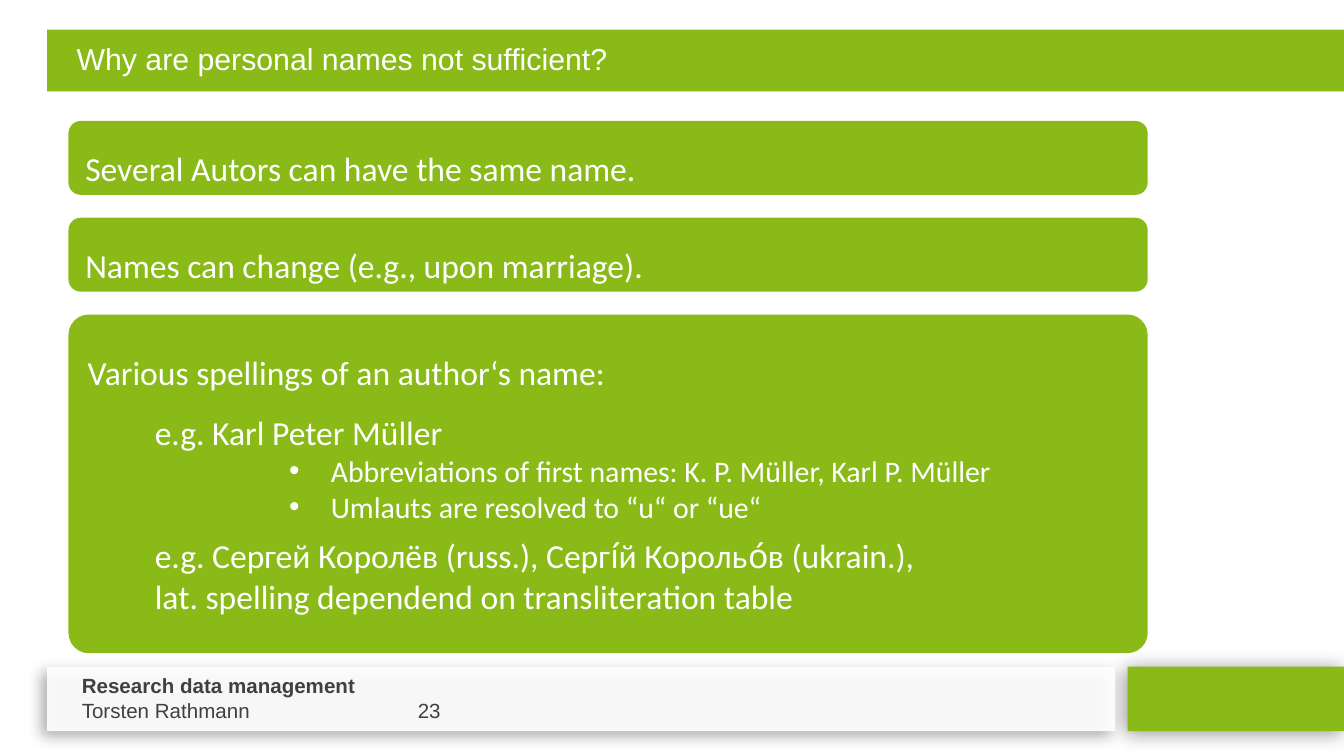
import pptx
import pptx.util
import pptx.dml.color
import pptx.enum.shapes
import pptx.enum.text
import pptx.oxml
from pptx.oxml.ns import nsdecls, qn

Inch, Pt = pptx.util.Inches, pptx.util.Pt
Kind = pptx.enum.shapes.MSO_SHAPE
Anchor = pptx.enum.text.MSO_ANCHOR
Left = pptx.enum.text.PP_ALIGN.LEFT

# Content
TITLE = "Why are personal names not sufficient?"
# Each line: text, style
CARDS = [
    [("Several Autors can have the same name.", "wide")],
    [("Names can change (e.g., upon marriage).", "wide")],
    [
        ("Various spellings of an author‘s name:", "plain"),
        ("\te.g. Karl Peter Müller", "wide"),
        ("Abbreviations of first names: K. P. Müller, Karl P. Müller", "bullet"),
        ("Umlauts are resolved to “u“ or “ue“", "bullet"),
        ("\te.g. Сергей Королёв (russ.), Сергі́й Корольо́в (ukrain.), \v"
         "\tlat. spelling dependend on transliteration table", "apart"),
    ],
]
FOOTER = ["Research data management", "Torsten Rathmann\t\t\t23"]

# Theme and layout
THEME = {
    "green": "89BA17", "white": "FFFFFF", "dark": "404040",
    "head": "Arial", "body": "Calibri",
    "title": 16.2, "text": 18, "small": 16, "foot": 11,
}
WIDE = 10
HIGH = WIDE * 9 / 16
EDGE, INNER = 0.35, 0.51
CARD_W, CARD_TOP, GAP = 8.03, 0.9, 0.17
CARD_H = [0.55, 0.55, 2.52]
FOOT_TOP, FOOT_H, FOOT_W, TAB_X = 4.96, 0.48, 7.95, 8.39
TAB = 0.5

deck = pptx.Presentation()
deck.slide_width, deck.slide_height = Inch(WIDE), Inch(HIGH)
slide = deck.slides.add_slide(deck.slide_layouts[5])
shapes = slide.shapes


def color(name):
    return pptx.dml.color.RGBColor.from_string(THEME[name])


def style(para, face, size, ink, bold=False):
    for run in para.runs:
        font = run.font
        font.name, font.size, font.bold = THEME[face], Pt(THEME[size]), bold
        font.color.rgb = color(ink)


def block(kind, x, y, w, h, fill):
    box = shapes.add_shape(kind, Inch(x), Inch(y), Inch(w), Inch(h))
    box.shadow.inherit = False
    box.fill.solid()
    box.fill.fore_color.rgb = color(fill)
    box.line.fill.background()
    return box


def shade(box, alpha, blur, dist, angle):
    box._element.spPr.find(qn("a:effectLst")).append(pptx.oxml.parse_xml(
        f'<a:outerShdw {nsdecls("a")} blurRad="{Pt(blur)}" dist="{Pt(dist)}" '
        f'dir="{angle * 60000}" rotWithShape="0"><a:srgbClr val="000000">'
        f'<a:alpha val="{alpha * 1000}"/></a:srgbClr></a:outerShdw>'))


def tabs(para, count):
    stops = "".join(f'<a:tab pos="{Inch(TAB * n)}" algn="l"/>'
                    for n in range(1, count + 1))
    para._p.get_or_add_pPr().append(pptx.oxml.parse_xml(
        f'<a:tabLst {nsdecls("a")}>{stops}</a:tabLst>'))


def bullet(para):
    props = para._p.get_or_add_pPr()
    props.set("marL", str(Inch(1.81)))
    props.set("indent", str(Inch(-0.31)))
    for xml in (f'<a:buFont {nsdecls("a")} typeface="Arial"/>',
                f'<a:buChar {nsdecls("a")} char="•"/>'):
        props.append(pptx.oxml.parse_xml(xml))


def write(frame, lines):
    frame.text = "\n".join(lines)
    frame.word_wrap = True
    for para in frame.paragraphs:
        para.alignment = Left
    return frame.paragraphs


# Footer
shade(block(Kind.RECTANGLE, TAB_X, FOOT_TOP, WIDE - TAB_X, FOOT_H, "green"),
      42, 10.8, 2, 142)
strip = block(Kind.RECTANGLE, EDGE, FOOT_TOP, FOOT_W, FOOT_H, "white")
shade(strip, 34, 7.5, 4, 145)
strip._element.spPr.find(qn("a:solidFill"))[0].append(
    pptx.oxml.parse_xml(f'<a:alpha {nsdecls("a")} val="91000"/>'))
note = shapes.add_textbox(Inch(INNER), Inch(FOOT_TOP), Inch(5.98), Inch(0.47))
for row, para in enumerate(write(note.text_frame, FOOTER)):
    tabs(para, 5)
    style(para, "head", "foot", "dark", bold=row == 0)

# Title on its bar
block(Kind.RECTANGLE, EDGE, 0.22, WIDE - EDGE, 0.46, "green")
title = shapes.title
title.left, title.top = Inch(EDGE), Inch(0.22)
title.width, title.height = Inch(WIDE - EDGE), Inch(0.35)
shapes._spTree.append(title._element)
frame = title.text_frame
para = write(frame, [TITLE])[0]
frame.auto_size = pptx.enum.text.MSO_AUTO_SIZE.NONE
frame.vertical_anchor = Anchor.TOP
frame.margin_top, frame.margin_bottom = Inch(0.08), Inch(0.05)
para._p.get_or_add_pPr().set("marL", str(Inch(0.12)))
style(para, "head", "title", "white")

# Cards
top = CARD_TOP
for lines, high in zip(CARDS, CARD_H):
    card = block(Kind.ROUNDED_RECTANGLE, INNER, top, CARD_W, high, "green")
    if len(lines) > 1:
        card.adjustments[0] = 0.06
    card.text_frame.vertical_anchor = Anchor.MIDDLE
    paras = write(card.text_frame, [text for text, look in lines])
    for para, (text, look) in zip(paras, lines):
        if look == "bullet":
            bullet(para)
            para.level = 4
        elif "\t" in text:
            tabs(para, 1)
        if look == "wide":
            para.line_spacing = 1.5
        if look == "apart":
            para.space_before = Pt(6)
        style(para, "body", "small" if look == "bullet" else "text", "white")
    top += high + GAP

deck.save("out.pptx")
